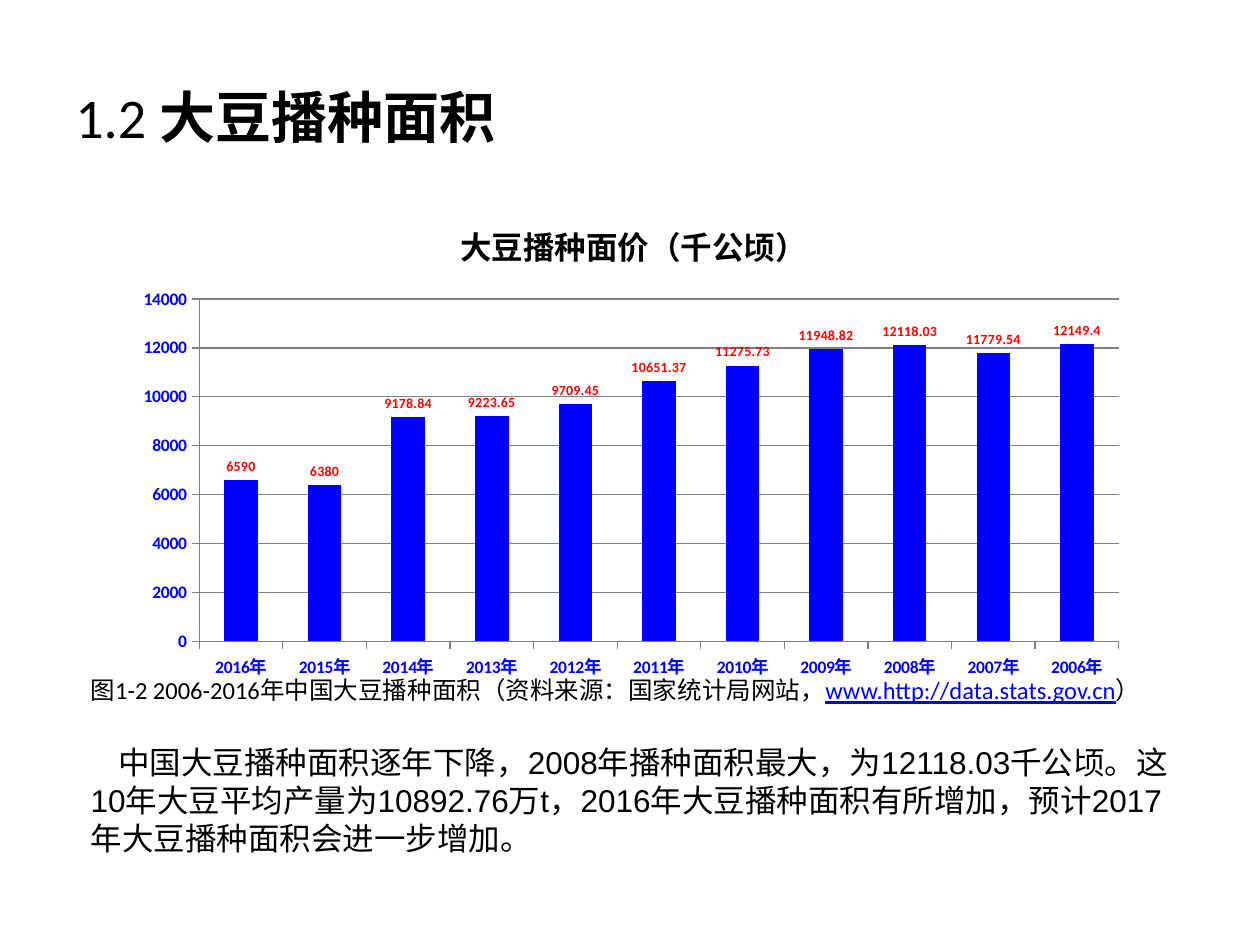
from lxml.etree import SubElement
from pptx import Presentation
from pptx.chart.data import CategoryChartData
from pptx.dml.color import RGBColor
from pptx.enum.chart import XL_CHART_TYPE, XL_LABEL_POSITION, XL_TICK_MARK
from pptx.enum.text import MSO_ANCHOR
from pptx.oxml.ns import qn
from pptx.util import Inches, Pt

WIDE, HIGH = Inches(10), Inches(7.5)
BLACK, BLUE, RED, GRAY = "000000", "0000FF", "FF0000", "808080"
HEAD = "大豆播种面价（千公顷）"
AREAS = [6590, 6380, 9178.84, 9223.65, 9709.45, 10651.37,
         11275.73, 11948.82, 12118.03, 11779.54, 12149.4]


def color(code):
    """Turn a hex string into a colour."""
    return RGBColor.from_string(code)


def share(left, top, width, height):
    """Turn percentages of the slide into a box."""
    return [int(part * side / 100) for part, side in
            zip((left, top, width, height), (WIDE, HIGH, WIDE, HIGH))]


def style(font, size, code=BLACK, bold=False, name="Calibri"):
    """Set the look of a font."""
    font.size, font.bold, font.name = Pt(size), bold, name
    font.color.rgb = color(code)


def frame(slide, box):
    """Add a wrapping text box and return its text frame."""
    text = slide.shapes.add_textbox(*box).text_frame
    text.word_wrap = True
    return text


def title(slide, box):
    """Place the slide title in the box."""
    text = frame(slide, box)
    text.vertical_anchor = MSO_ANCHOR.MIDDLE
    line = text.paragraphs[0]
    style(line.font, 32)
    line.add_run().text = "1.2 "
    name = line.add_run()
    name.text, name.font.bold = "大豆播种面积", True


def set_plot(chart, **parts):
    """Fix the inner plot area as shares of the chart."""
    area = chart._chartSpace.chart.plotArea
    old = area.find(qn("c:layout"))
    if old is not None:
        area.remove(old)
    layout = area.makeelement(qn("c:layout"))
    area.insert(0, layout)
    manual = SubElement(layout, qn("c:manualLayout"))
    rules = {"layoutTarget": "inner", "xMode": "edge", "yMode": "edge", **parts}
    for tag, val in rules.items():
        SubElement(manual, qn("c:" + tag)).set("val", str(val))


def graph(slide, box):
    """Place the column chart of sown areas in the box."""
    data = CategoryChartData()
    data.categories = [f"{year}年" for year in range(2016, 2005, -1)]
    data.add_series(HEAD, AREAS)
    chart = slide.shapes.add_chart(
        XL_CHART_TYPE.COLUMN_CLUSTERED, *box, data).chart
    style(chart.font, 10)
    chart.has_legend = False
    chart.has_title = True
    head = chart.chart_title.text_frame
    head.text = HEAD
    style(head.paragraphs[0].runs[0].font, 18, bold=True)

    scale = chart.value_axis
    scale.minimum_scale, scale.maximum_scale, scale.major_unit = 0, 14000, 2000
    for axis in (chart.category_axis, scale):
        style(axis.tick_labels.font, 10, BLUE, True)
        axis.major_tick_mark = XL_TICK_MARK.OUTSIDE
    for item in (chart.category_axis, scale, scale.major_gridlines):
        item.format.line.color.rgb = color(GRAY)
        item.format.line.width = Pt(0.75)

    plot = chart.plots[0]
    plot.gap_width, plot.vary_by_categories = 150, False
    fill = plot.series[0].format.fill
    fill.solid()
    fill.fore_color.rgb = color(BLUE)
    plot.has_data_labels = True
    labels = plot.data_labels
    labels.show_value = True
    labels.position = XL_LABEL_POSITION.OUTSIDE_END
    labels.number_format, labels.number_format_is_linked = "General", False
    style(labels.font, 8, RED, True)
    set_plot(chart, x=0.07, y=0.21, w=0.91, h=0.7)


def notes(slide, box):
    """Place the caption and the comment in the box."""
    text = frame(slide, box)
    line = text.paragraphs[0]
    style(line.font, 14)
    line.add_run().text = "图1-2 2006-2016年中国大豆播种面积（资料来源：国家统计局网站，"
    link = line.add_run()
    link.text, link.font.underline = "www.http://data.stats.gov.cn", True
    link.font.color.rgb = color(BLUE)
    line.add_run().text = "）"

    body = text.add_paragraph()
    body.text = ("中国大豆播种面积逐年下降，2008年播种面积最大，为12118.03千公顷。"
                 "这10年大豆平均产量为10892.76万t，2016年大豆播种面积有所增加，"
                 "预计2017年大豆播种面积会进一步增加。")
    style(body.font, 18, name="Arial")
    body.space_before = Pt(22)
    body._p.get_or_add_pPr().set("indent", str(Inches(0.22)))


def main():
    """Build and save the slide."""
    deck = Presentation()
    deck.slide_width, deck.slide_height = WIDE, HIGH
    slide = deck.slides.add_slide(deck.slide_layouts[6])
    title(slide, share(5, 4, 90, 16.67))
    graph(slide, share(10.2, 20.8, 80.2, 51.73))
    notes(slide, share(6.2, 70.8, 89.1, 24.53))
    deck.save("out.pptx")


if __name__ == "__main__":
    main()
